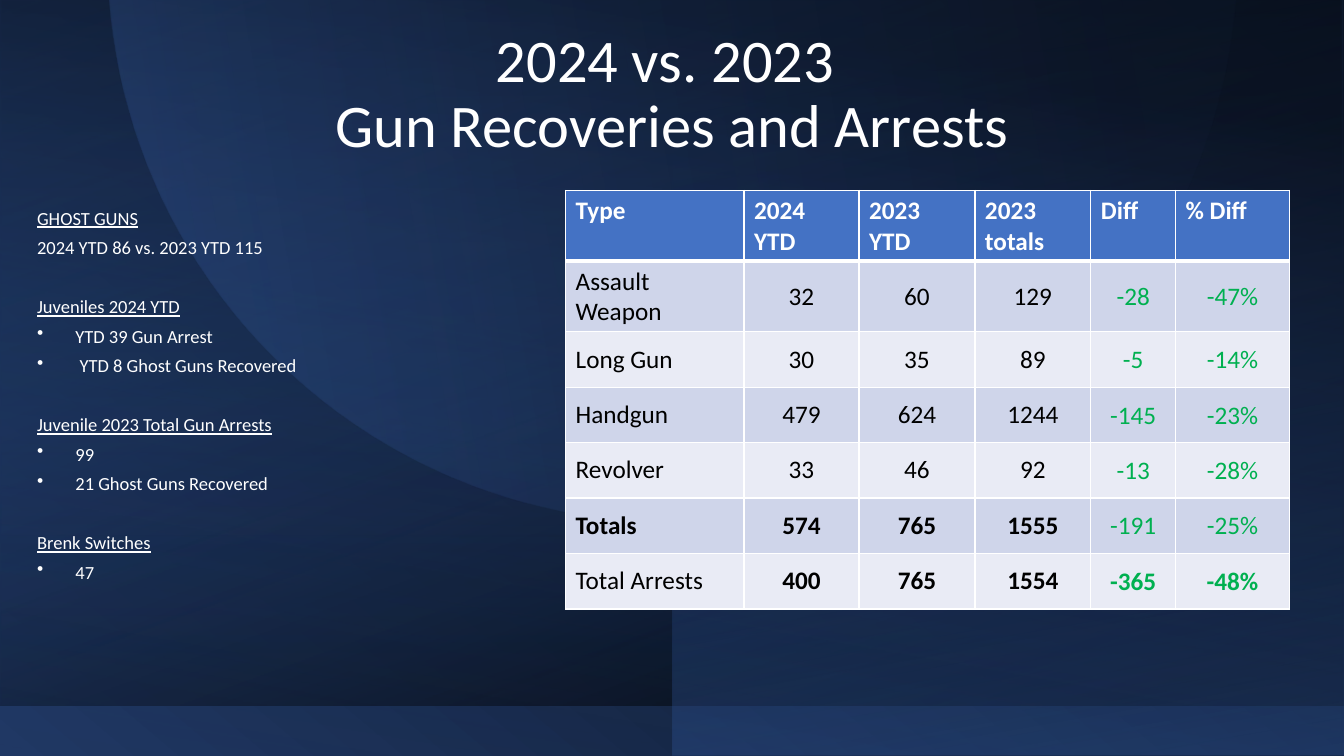
from dataclasses import dataclass
from math import asin, cos, pi, sin

from lxml.etree import SubElement
from pptx import Presentation
from pptx.dml.color import RGBColor
from pptx.enum.shapes import MSO_SHAPE
from pptx.enum.text import MSO_ANCHOR, PP_ALIGN
from pptx.oxml import parse_xml
from pptx.oxml.ns import nsdecls, qn
from pptx.util import Inches, Pt


@dataclass(frozen=True)
class Theme:
    font: str = "Calibri"
    navy: str = "203864"
    blue: str = "2F5597"
    accent: str = "4472C4"
    black: str = "000000"
    white: str = "FFFFFF"
    green: str = "00B050"
    band_dark: str = "CFD5EA"
    band_light: str = "E9EBF5"
    title_size: float = 43.2
    summary_size: float = 13.2
    table_size: float = 18


THEME = Theme()
TITLE = ("2024 vs. 2023 ", "Gun Recoveries and Arrests")
SECTIONS = [
    ("GHOST GUNS", ["2024 YTD 86 vs. 2023 YTD 115"], False),
    ("Juveniles 2024 YTD", ["YTD 39 Gun Arrest", " YTD 8 Ghost Guns Recovered"], True),
    ("Juvenile 2023 Total Gun Arrests", ["99", "21 Ghost Guns Recovered"], True),
    ("Brenk Switches", ["47"], True),
]
COLUMN_WIDTHS = (1.77, 1.14, 1.15, 1.15, 0.84, 1.13)
GUN_ROWS = [
    ("Type", "2024 YTD", "2023 YTD", "2023 totals", "Diff", "% Diff"),
    ("Assault Weapon", "32", "60", "129", "-28", "-47%"),
    ("Long Gun", "30", "35", "89", "-5", "-14%"),
    ("Handgun", "479", "624", "1244", "-145", "-23%"),
    ("Revolver", "33", "46", "92", "-13", "-28%"),
    ("Totals", "574", "765", "1555", "-191", "-25%"),
    ("Total Arrests", "400", "765", "1554", "-365", "-48%"),
]
BOLD_COLUMNS = {0: range(6), 5: range(4), 6: range(1, 6)}
DIFF_COLUMN = 4


def style_font(font, size, color, bold=False):
    font.name = THEME.font
    font.size = Pt(size)
    font.bold = bold
    font.color.rgb = RGBColor.from_string(color)


def fill_gradient(shape, stops, angle):
    """Fill with (position %, colour, opacity %) stops along a clockwise angle."""
    stop_xml = "".join(
        f'<a:gs pos="{position * 1000}"><a:srgbClr val="{color}">'
        f'<a:alpha val="{opacity * 1000}"/></a:srgbClr></a:gs>'
        for position, color, opacity in stops
    )
    gradient = parse_xml(
        f'<a:gradFill {nsdecls("a")} rotWithShape="1"><a:gsLst>{stop_xml}</a:gsLst>'
        f'<a:lin ang="{angle * 60000}" scaled="0"/></a:gradFill>'
    )
    shape.fill.background()
    properties = shape.element.spPr
    properties.replace(properties.find(qn("a:noFill")), gradient)
    shape.line.fill.background()
    shape.shadow.inherit = False


def add_gradient_layer(slide, box, stops, angle, rotation=0, flipped=True):
    layer = slide.shapes.add_shape(MSO_SHAPE.RECTANGLE, *map(Inches, box))
    layer.rotation = rotation
    if flipped:
        layer.element.spPr.xfrm.set("flipH", "1")
    fill_gradient(layer, stops, angle)


def add_disc(slide, center_x, center_y, radius, segments=90):
    """Draw the part of a circle that lies below the slide's top edge."""
    start = asin(-center_y / radius)
    angles = [start + (pi - 2 * start) * i / segments for i in range(segments + 1)]
    points = [
        (Inches(center_x + radius * cos(a)), Inches(center_y + radius * sin(a)))
        for a in angles
    ]
    outline = slide.shapes.build_freeform(*points[0])
    outline.add_line_segments(points[1:], close=True)
    fill_gradient(
        outline.convert_to_shape(), [(7, THEME.navy, 4), (99, THEME.accent, 24)], 170
    )


def add_backdrop(slide):
    slide.background.fill.solid()
    slide.background.fill.fore_color.rgb = RGBColor.from_string(THEME.navy)
    navy, blue, black = THEME.navy, THEME.blue, THEME.black
    add_gradient_layer(slide, (0, 0, 13.33, 7.5), [(0, navy, 100), (100, black, 100)], 230)
    add_gradient_layer(slide, (0, 0, 13.33, 7), [(1, blue, 59), (100, black, 100)], 250,
                       rotation=180, flipped=False)
    add_gradient_layer(slide, (2.91, -2.9, 7.5, 13.3), [(13, navy, 0), (99, black, 28)], 0,
                       rotation=90)
    add_gradient_layer(slide, (6.67, 0, 6.67, 7.5), [(13, navy, 0), (99, blue, 50)], 100)
    add_gradient_layer(slide, (0, 0, 13.32, 7.52), [(13, black, 35), (99, blue, 0)], 80)
    add_disc(slide, 6.67, -0.42, 5.6)


def add_text_frame(slide, box):
    frame = slide.shapes.add_textbox(*map(Inches, box)).text_frame
    frame.word_wrap = True
    frame.vertical_anchor = MSO_ANCHOR.MIDDLE
    return frame


def add_title(slide):
    heading = add_text_frame(slide, (2.21, 0.27, 8.91, 1.35)).paragraphs[0]
    heading.alignment = PP_ALIGN.CENTER
    heading.line_spacing = 0.9
    style_font(heading.font, THEME.title_size, THEME.white)
    heading.add_run().text = TITLE[0]
    heading.add_line_break()
    heading.add_run().text = TITLE[1]


def add_bullet(paragraph):
    properties = paragraph._p.get_or_add_pPr()
    properties.set("marL", str(Inches(0.38)))
    properties.set("indent", str(-Inches(0.38)))
    bullet = parse_xml(f'<a:buChar {nsdecls("a")} char="•"/>')
    properties.find(qn("a:defRPr")).addprevious(bullet)


def add_summary_line(paragraph, text, space_before=10):
    paragraph.text = text
    paragraph.line_spacing = 0.7
    paragraph.space_before = Pt(space_before)
    style_font(paragraph.font, THEME.summary_size, THEME.white)


def add_summary_column(slide):
    frame = add_text_frame(slide, (0.27, 2.04, 6.13, 3.81))
    for index, (heading, lines, bulleted) in enumerate(SECTIONS):
        header = frame.add_paragraph() if index else frame.paragraphs[0]
        add_summary_line(header, heading, space_before=31 if index else 10)
        header.font.underline = True
        for line in lines:
            item = frame.add_paragraph()
            add_summary_line(item, line)
            if bulleted:
                add_bullet(item)


def set_borders(cell, top=1, bottom=1):
    properties = cell._tc.get_or_add_tcPr()
    for side, width in (("lnL", 1), ("lnR", 1), ("lnT", top), ("lnB", bottom)):
        border = SubElement(properties, qn(f"a:{side}"), w=str(Pt(width)))
        SubElement(SubElement(border, qn("a:solidFill")), qn("a:srgbClr"), val=THEME.white)


def style_gun_cell(cell, row, column):
    is_diff = row > 0 and column >= DIFF_COLUMN
    set_borders(cell, top=3 if row == 1 else 1, bottom=3 if row == 0 else 1)
    if row == 0:
        fill, color = THEME.accent, THEME.white
    else:
        fill = THEME.band_dark if row % 2 else THEME.band_light
        color = THEME.green if is_diff else THEME.black
        cell.vertical_anchor = MSO_ANCHOR.MIDDLE
    cell.fill.solid()
    cell.fill.fore_color.rgb = RGBColor.from_string(fill)
    if is_diff:
        cell.margin_left = cell.margin_right = cell.margin_top = Inches(0.01)
        cell.margin_bottom = 0
    paragraph = cell.text_frame.paragraphs[0]
    if row and column:
        paragraph.alignment = PP_ALIGN.CENTER
    style_font(paragraph.font, THEME.table_size, color, column in BOLD_COLUMNS.get(row, ()))


def add_gun_table(slide):
    table = slide.shapes.add_table(
        len(GUN_ROWS), len(COLUMN_WIDTHS),
        Inches(5.61), Inches(1.89), Inches(7.2), Inches(3.84),
    ).table
    for column, width in zip(table.columns, COLUMN_WIDTHS):
        column.width = Inches(width)
    for row, values in enumerate(GUN_ROWS):
        table.rows[row].height = Inches(0.55 if row else 0.54)
        for column, value in enumerate(values):
            cell = table.cell(row, column)
            cell.text = value
            style_gun_cell(cell, row, column)


def main():
    deck = Presentation()
    deck.slide_width, deck.slide_height = Inches(13.33), Inches(7.5)
    slide = deck.slides.add_slide(deck.slide_layouts[6])
    add_backdrop(slide)
    add_title(slide)
    add_summary_column(slide)
    add_gun_table(slide)
    deck.save("out.pptx")


if __name__ == "__main__":
    main()
